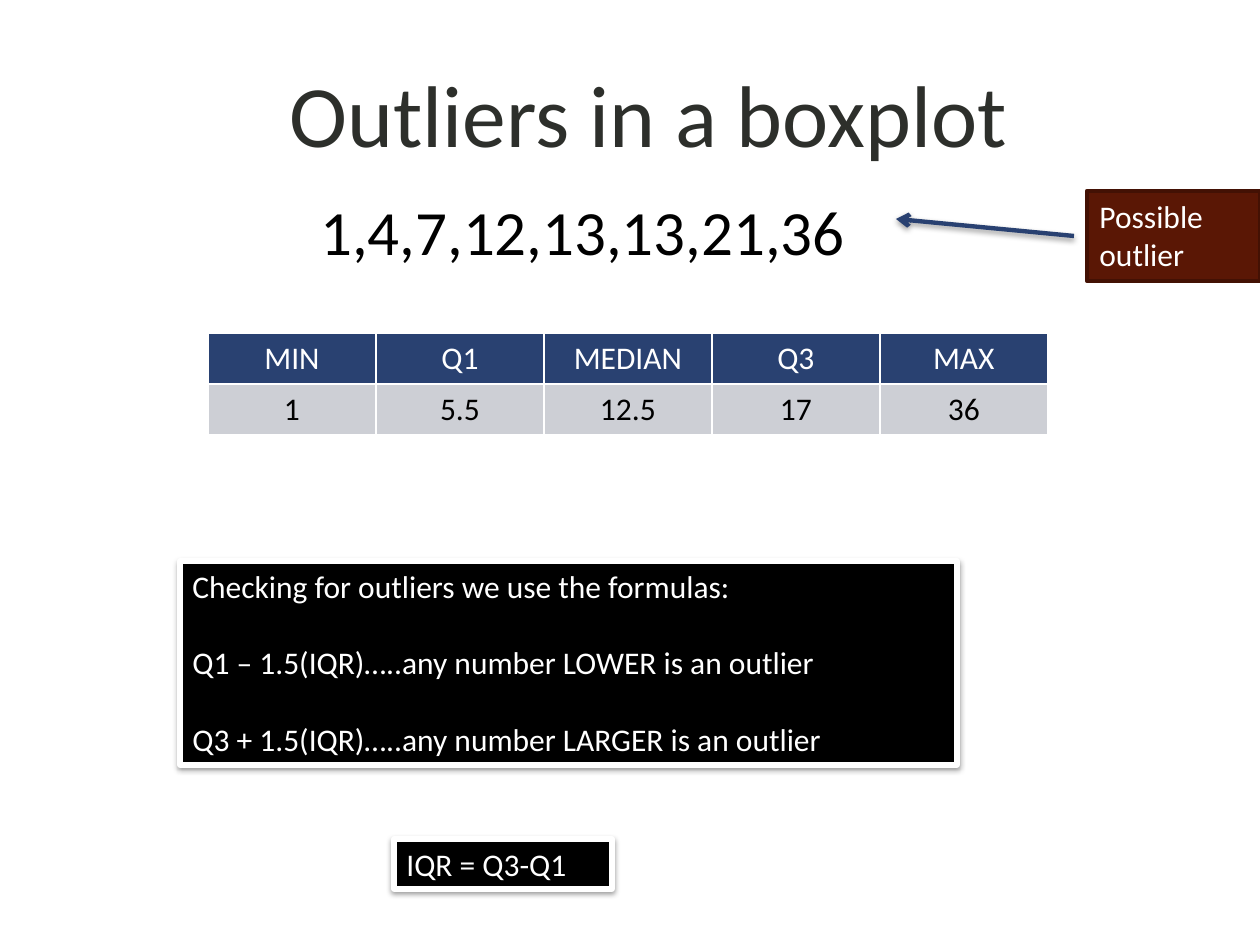
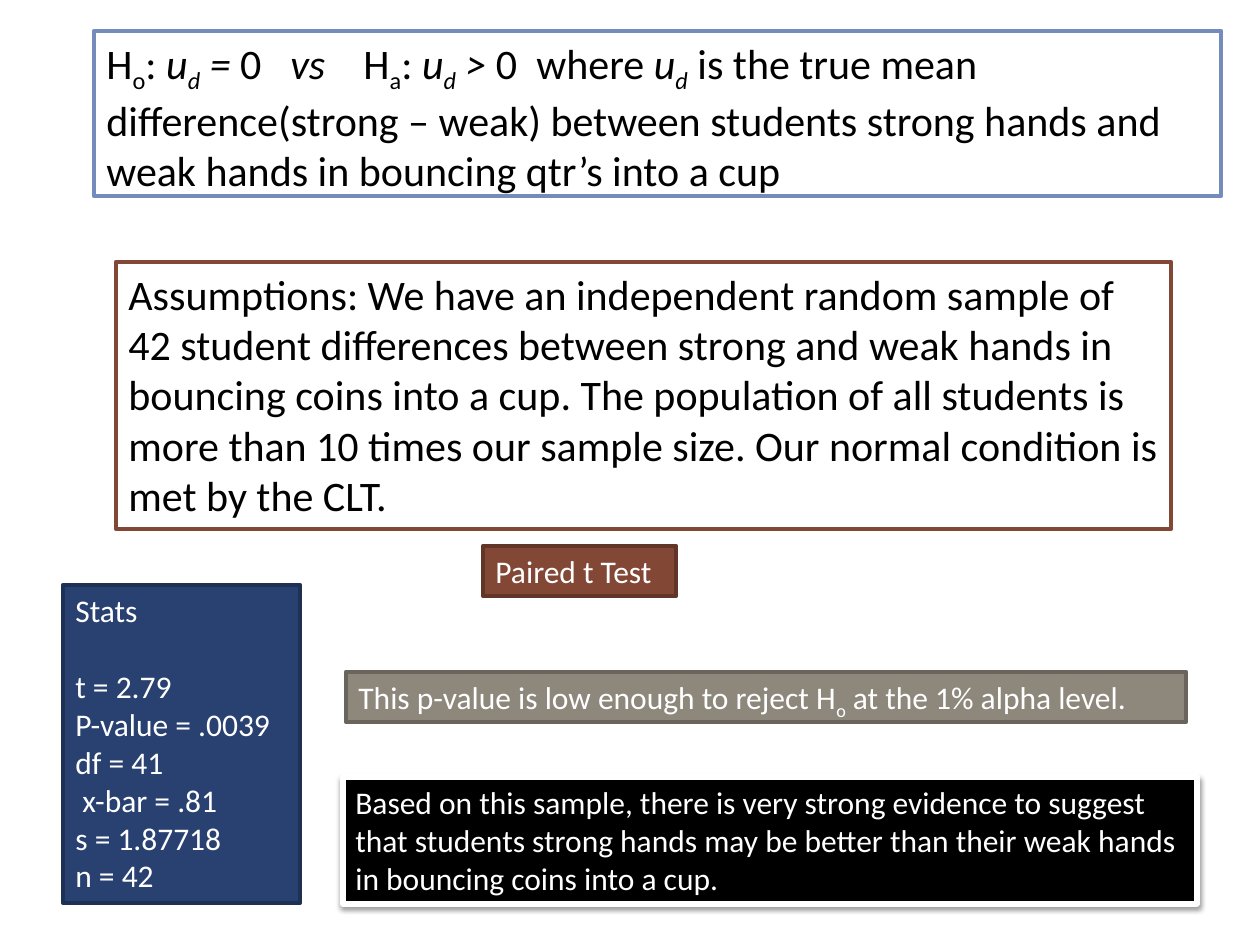
from dataclasses import dataclass
from typing import NamedTuple

from lxml.etree import SubElement
from pptx import Presentation
from pptx.dml.color import RGBColor
from pptx.enum.shapes import MSO_CONNECTOR, MSO_SHAPE
from pptx.enum.text import MSO_ANCHOR, PP_ALIGN
from pptx.oxml.ns import qn
from pptx.util import Emu, Pt

EMU_PER_PX = 914400 / 126


@dataclass(frozen=True)
class Theme:
    font: str = "Calibri"
    white: str = "FFFFFF"
    black: str = "000000"
    title: str = "2D2F2B"
    navy: str = "294171"
    navy_edge: str = "1E3054"
    sky: str = "748CBC"
    rust: str = "834736"
    rust_edge: str = "613528"
    maroon: str = "5A1705"
    maroon_edge: str = "431104"
    stone: str = "8E887C"
    stone_edge: str = "69655C"
    silver: str = "CDCFD5"
    title_size: int = 50
    data_size: int = 36
    large_size: int = 24
    body_size: int = 18
    blank_line: int = 22
    edge_width: float = 2.5
    frame_width: float = 3


THEME = Theme()


class Area(NamedTuple):
    left: int
    top: int
    width: int
    height: int


class Span(NamedTuple):
    text: str
    italic: bool = False
    lowered: bool = False


class Para(NamedTuple):
    spans: tuple[Span, ...]
    space_before: int = 0
    tabs: tuple[int, ...] = ()


class Look(NamedTuple):
    fill: str
    edge: str
    color: str = THEME.white
    size: int = THEME.body_size
    edge_width: float = THEME.edge_width
    shadow: bool = False


class Panel(NamedTuple):
    area: Area
    look: Look
    paras: tuple[Para, ...]


FRAMED = Look(THEME.black, THEME.white, edge_width=THEME.frame_width, shadow=True)
HYPOTHESIS = Look(THEME.white, THEME.sky, THEME.black, THEME.large_size)
ASSUMPTION = Look(THEME.white, THEME.rust, THEME.black, THEME.large_size)
WARNING = Look(THEME.maroon, THEME.maroon_edge)
STATISTICS = Look(THEME.navy, THEME.navy_edge)
TEST_NAME = Look(THEME.rust, THEME.rust_edge)
DECISION = Look(THEME.stone, THEME.stone_edge)


def px(length: float) -> Emu:
    return Emu(round(length * EMU_PER_PX))


def place(area: Area) -> tuple[Emu, ...]:
    return tuple(px(length) for length in area)


def rgb(color: str) -> RGBColor:
    return RGBColor.from_string(color)


def plain(text: str, space_before: int = 0) -> Para:
    return Para((Span(text),), space_before)


def write(frame, paras, *, size=THEME.body_size, color=THEME.black,
          align=PP_ALIGN.LEFT, anchor=MSO_ANCHOR.TOP) -> None:
    frame.word_wrap = True
    frame.vertical_anchor = anchor
    for index, source in enumerate(paras):
        para = frame.add_paragraph() if index else frame.paragraphs[0]
        para.alignment = align
        para.space_before = Pt(source.space_before)
        if source.tabs:
            tab_list = SubElement(para._p.get_or_add_pPr(), qn("a:tabLst"))
            for position in source.tabs:
                SubElement(tab_list, qn("a:tab"), pos=str(px(position)), algn="l")
        for part in source.spans:
            span = para.add_run()
            span.text = part.text
            span.font.name = THEME.font
            span.font.size = Pt(size)
            span.font.bold = False
            span.font.italic = part.italic
            span.font.color.rgb = rgb(color)
            if part.lowered:
                span.font._element.set("baseline", "-25000")


def drop_shadow(effects) -> None:
    shadow = SubElement(effects, qn("a:outerShdw"), blurRad="40000",
                        dist="20000", dir="5400000", rotWithShape="0")
    color = SubElement(shadow, qn("a:srgbClr"), val=THEME.black)
    SubElement(color, qn("a:alpha"), val="38000")


def add_panel(page, panel: Panel) -> None:
    look = panel.look
    box = page.shapes.add_shape(MSO_SHAPE.RECTANGLE, *place(panel.area))
    box.fill.solid()
    box.fill.fore_color.rgb = rgb(look.fill)
    box.line.color.rgb = rgb(look.edge)
    box.line.width = Pt(look.edge_width)
    box.shadow.inherit = False
    if look.shadow:
        drop_shadow(box.element.spPr.find(qn("a:effectLst")))
    write(box.text_frame, panel.paras, size=look.size, color=look.color)


def add_arrow(page, start: tuple[int, int], end: tuple[int, int]) -> None:
    points = [px(length) for length in start + end]
    arrow = page.shapes.add_connector(MSO_CONNECTOR.STRAIGHT, *points)
    arrow.line.color.rgb = rgb(THEME.navy)
    arrow.line.width = Pt(THEME.edge_width)
    properties = arrow.element.spPr
    SubElement(properties.find(qn("a:ln")), qn("a:tailEnd"), type="arrow")
    drop_shadow(SubElement(properties, qn("a:effectLst")))


def add_summary_table(page, area: Area, rows: tuple[tuple[str, ...], ...]) -> None:
    table = page.shapes.add_table(len(rows), len(rows[0]), *place(area)).table
    looks = ((THEME.navy, THEME.white), (THEME.silver, THEME.black))
    for row_index, (values, (fill, color)) in enumerate(zip(rows, looks)):
        for column_index, value in enumerate(values):
            cell = table.cell(row_index, column_index)
            properties = cell._tc.get_or_add_tcPr()
            for side in ("L", "R", "T", "B"):
                border = SubElement(properties, qn(f"a:ln{side}"), w=str(Pt(1)))
                paint = SubElement(border, qn("a:solidFill"))
                SubElement(paint, qn("a:srgbClr"), val=THEME.white)
            cell.fill.solid()
            cell.fill.fore_color.rgb = rgb(fill)
            write(cell.text_frame, [plain(value)], color=color, align=PP_ALIGN.CENTER)


def build_outliers(deck) -> None:
    page = deck.slides.add_slide(deck.slide_layouts[5])
    title = page.shapes.title
    title.left, title.top, title.width, title.height = place(Area(103, 59, 1091, 108))
    write(title.text_frame, [plain("Outliers in a boxplot")], size=THEME.title_size,
          color=THEME.title, align=PP_ALIGN.CENTER, anchor=MSO_ANCHOR.MIDDLE)
    data = page.shapes.add_textbox(*place(Area(180, 186, 806, 89)))
    write(data.text_frame, [plain("1,4,7,12,13,13,21,36")],
          size=THEME.data_size, align=PP_ALIGN.CENTER)
    add_summary_table(page, Area(208, 333, 840, 102), (
        ("MIN", "Q1", "MEDIAN", "Q3", "MAX"),
        ("1", "5.5", "12.5", "17", "36"),
    ))
    add_arrow(page, (1074, 236), (896, 219))
    panels = (
        Panel(Area(1087, 191, 173, 90), WARNING, (plain("Possible outlier"),)),
        Panel(Area(180, 561, 777, 204), FRAMED, (
            plain("Checking for outliers we use the formulas:"),
            plain("Q1 – 1.5(IQR)…..any number LOWER is an outlier", THEME.blank_line),
            plain("Q3 + 1.5(IQR)…..any number LARGER is an outlier", THEME.blank_line),
        )),
        Panel(Area(394, 839, 218, 50), FRAMED, (plain("IQR = Q3-Q1"),)),
    )
    for panel in panels:
        add_panel(page, panel)


def build_paired_test(deck) -> None:
    page = deck.slides.add_slide(deck.slide_layouts[6])
    mean_difference = (Span("u", italic=True), Span("d", italic=True, lowered=True))
    hypotheses = Para((
        Span("H"), Span("o", lowered=True), Span(": "), *mean_difference,
        Span(" = ", italic=True), Span("0\t"), Span("vs\t", italic=True),
        Span("H"), Span("a", lowered=True), Span(": "), *mean_difference,
        Span(" > ", italic=True), Span("0\twhere "), *mean_difference,
        Span(" is the true mean difference(strong – weak) between students "
             "strong hands and weak hands in bouncing qtr’s into a cup"),
    ), tabs=(184, 257, 430))
    statistics = ("t = 2.79", "P-value = .0039", "df = 41", " x-bar = .81",
                  "s = 1.87718", "n = 42")
    panels = (
        Panel(Area(94, 31, 1127, 165), HYPOTHESIS, (hypotheses,)),
        Panel(Area(116, 262, 1055, 267), ASSUMPTION, (plain(
            "Assumptions: We have an independent random sample of 42 student "
            "differences between strong and weak hands in bouncing coins into a cup. "
            "The population of all students is more than 10 times our sample size. "
            "Our normal condition is met by the CLT."),)),
        Panel(Area(63, 585, 237, 318), STATISTICS, (
            plain("Stats"),
            *(plain(text, 0 if index else THEME.blank_line)
              for index, text in enumerate(statistics)),
        )),
        Panel(Area(483, 546, 193, 50), TEST_NAME, (plain("Paired t Test"),)),
        Panel(Area(346, 672, 840, 50), DECISION, (Para((
            Span("This p-value is low enough to reject H"),
            Span("o", lowered=True),
            Span(" at the 1% alpha level."),
        )),)),
        Panel(Area(343, 777, 854, 127), FRAMED, (plain(
            "Based on this sample, there is very strong evidence to suggest that "
            "students strong hands may be better than their weak hands in bouncing "
            "coins into a cup."),)),
    )
    for panel in panels:
        add_panel(page, panel)


def main() -> None:
    deck = Presentation()
    deck.slide_width, deck.slide_height = px(1260), px(945)
    build_outliers(deck)
    build_paired_test(deck)
    deck.save("out.pptx")


if __name__ == "__main__":
    main()
